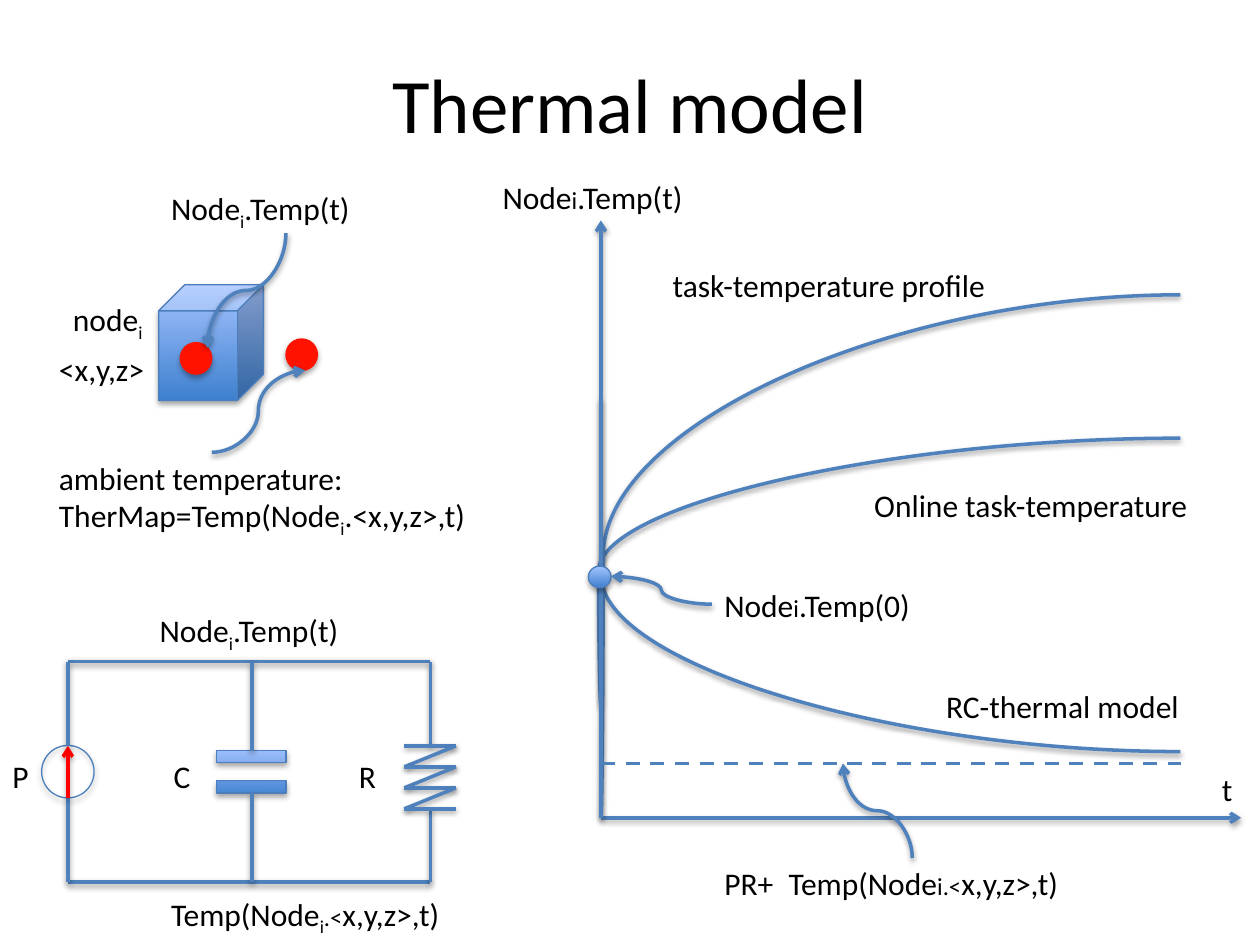
from dataclasses import dataclass

from lxml import etree
from pptx import Presentation
from pptx import util as u
from pptx.dml.color import RGBColor
from pptx.enum import dml, shapes, text
from pptx.oxml.ns import qn


@dataclass(frozen=True)
class Theme:
    font: str = "Calibri"
    title: float = 44
    body: float = 18
    small: float = 14
    stroke: float = 2
    outline_width: float = 0.75
    ink: RGBColor = RGBColor(0, 0, 0)
    blue: RGBColor = RGBColor(0x4F, 0x81, 0xBD)
    outline: RGBColor = RGBColor(0x4B, 0x7E, 0xBC)
    dark: RGBColor = RGBColor(0x3F, 0x80, 0xCE)
    light: RGBColor = RGBColor(0xA4, 0xC4, 0xFF)
    hot: RGBColor = RGBColor(0xFF, 0x13, 0x00)
    source: RGBColor = RGBColor(0xFF, 0x00, 0x00)


theme = Theme()
presentation = Presentation()
presentation.slide_width, presentation.slide_height = u.Pt(720), u.Pt(540)
slide = presentation.slides.add_slide(presentation.slide_layouts[6])


def add_label(left, top, width, height, paragraphs, wrap=False, size=theme.body):
    """Each paragraph is a list of runs: text, or (text, "sub" or "small")."""
    box = slide.shapes.add_textbox(u.Pt(left), u.Pt(top), u.Pt(width), u.Pt(height))
    frame = box.text_frame
    frame.word_wrap = wrap
    frame.auto_size = text.MSO_AUTO_SIZE.SHAPE_TO_FIT_TEXT
    for index, runs in enumerate(paragraphs):
        paragraph = frame.add_paragraph() if index else frame.paragraphs[0]
        for item in runs:
            words, style = (item, "") if isinstance(item, str) else item
            run = paragraph.add_run()
            run.text = words
            run.font.name = theme.font
            run.font.size = u.Pt(theme.small if style == "small" else size)
            run.font.color.rgb = theme.ink
            if style == "sub":
                run.font._element.set("baseline", "-25000")
    return box


def add_line(x1, y1, x2, y2, arrow=False, color=theme.blue, bend=None, vertical=False):
    """Bend is the turning point of a curve; vertical curves leave upright."""
    kind = shapes.MSO_CONNECTOR.STRAIGHT if bend is None else shapes.MSO_CONNECTOR.CURVE
    turn = 1 if y2 > y1 else -1
    if vertical:
        # Lay the curve on its side about its centre, then turn it upright
        center_x, center_y = (x1 + x2) / 2, (y1 + y2) / 2
        along, across = turn * (y1 - center_y), -turn * (x1 - center_x)
        x1, x2 = center_x + along, center_x - along
        y1, y2 = center_y + across, center_y - across
    line = slide.shapes.add_connector(kind, u.Pt(x1), u.Pt(y1), u.Pt(x2), u.Pt(y2))
    line.line.color.rgb = color
    line.line.width = u.Pt(theme.stroke)
    properties = line._element.spPr
    if vertical:
        properties.find(qn("a:xfrm")).set("rot", str(turn * 90 % 360 * 60000))
    if bend is not None:
        adjustments = properties.find(qn("a:prstGeom")).get_or_add_avLst()
        etree.SubElement(adjustments, qn("a:gd"), name="adj1", fmla=f"val {round(bend * 100000)}")
    if arrow:
        etree.SubElement(properties.find(qn("a:ln")), qn("a:tailEnd"), type="arrow")
    return line


# Title
title = add_label(36, 13.7, 648, 90, [["Thermal model"]], wrap=True, size=theme.title)
title.text_frame.auto_size = text.MSO_AUTO_SIZE.NONE
title.text_frame.vertical_anchor = text.MSO_ANCHOR.MIDDLE
title.text_frame.paragraphs[0].alignment = text.PP_ALIGN.CENTER

# Graph curves, axes and ambient level
axis_x, axis_y, curve_end = 343.4, 467.3, 674.6
for start_y, end_y, bend in (
    (227.5, 429.5, 0),
    (402.6, 250.4, -0.004),
    (axis_y, 168.5, 0.004),
):
    add_line(axis_x, start_y, curve_end, end_y, bend=bend)
add_line(axis_x, axis_y, 709.2, axis_y, arrow=True)
add_line(axis_x, axis_y, axis_x, 126, arrow=True)
ambient = add_line(axis_x, 436.3, curve_end, 436.3)
ambient.line.dash_style = dml.MSO_LINE.DASH
etree.SubElement(ambient._element.spPr, qn("a:effectLst"))

# Solid shapes, with the theme's soft shadow: start point, cube, heat spots, circuit parts
preset = shapes.MSO_SHAPE
for kind, left, top, width, height, fill in (
    (preset.OVAL, 336.2, 323.5, 13, 12.4, "gradient"),
    (preset.CUBE, 90.7, 162.7, 59.8, 66.2, "gradient"),
    (preset.OVAL, 103, 195.8, 18, 18, "hot"),
    (preset.OVAL, 163.4, 193.7, 18, 18, "hot"),
    (preset.OVAL, 23.8, 426, 30, 30, "none"),
    (preset.MATH_EQUAL, 116.6, 426, 54, 30, "gradient"),
):
    shape = slide.shapes.add_shape(kind, u.Pt(left), u.Pt(top), u.Pt(width), u.Pt(height))
    shape.line.width = u.Pt(theme.outline_width)
    shape.line.color.rgb = theme.hot if fill == "hot" else theme.outline
    if fill == "gradient":
        shape.fill.gradient()
        shape.fill.gradient_angle = 90
        for stop, color in zip(shape.fill.gradient_stops, (theme.dark, theme.light)):
            stop.color.rgb = color
    elif fill == "hot":
        shape.fill.solid()
        shape.fill.fore_color.rgb = theme.hot
    else:
        shape.fill.background()
    if kind == preset.MATH_EQUAL:
        shape.adjustments[0], shape.adjustments[1] = 0.235, 0.341

# Curved pointers
add_line(521.3, 490.3, 481.7, 436.3, arrow=True, bend=0.5, vertical=True)
add_line(406.8, 345.3, 349.2, 329.4, arrow=True, bend=0.5)
add_line(121, 258.5, 174.2, 211.7, arrow=True, bend=0.5)
add_line(163.4, 133.2, 118.4, 198.7, arrow=True, bend=0.5, vertical=True)

# Circuit wires
wire_left, wire_middle, wire_right = 38.8, 144, 245.9
wire_top, wire_bottom, part_top = 378, 504, 426.2
for y in (wire_top, wire_bottom):
    add_line(wire_left, y, wire_right, y)
for x, upper_end, lower_start in (
    (wire_left, part_top, 456),
    (wire_middle, 429.1, 452.9),
    (wire_right, part_top, 462.2),
):
    add_line(x, wire_top, x, upper_end)
    add_line(x, lower_start, x, wire_bottom)
add_line(wire_left, 456, wire_left, part_top, arrow=True, color=theme.source)

# Resistor zigzag
zig_left, zig_right, zig_step = 231.1, 260.6, 12
for row in range(4):
    y = part_top + row * zig_step
    add_line(zig_left, y, zig_right, y)
    if row < 3:
        add_line(zig_right, y, zig_left, y + zig_step)

# Graph labels
for left, top, width, runs in (
    (691.2, 436.3, 21.6, ["t"]),
    (533.5, 388.8, 157.7, ["RC-thermal model"]),
    (492.5, 274.3, 227.5, ["Online task-temperature"]),
    (280.1, 97.9, 126.7, ["Node", ("i", "small"), ".Temp(t)"]),
    (443.5, 490.3, 180.7, ["Temp(Node", ("i.<", "small"), "x,y,z>,t)"]),
    (406.8, 490.3, 51.1, ["PR+"]),
    (406.8, 331.2, 128.9, ["Node", ("i", "small"), ".Temp(0)"]),
    (377.3, 148.3, 208.1, ["task-temperature profile"]),
):
    add_label(left, top, width, 29, [runs], wrap=True)

# Node and circuit labels
node_temperature = ["Node", ("i", "sub"), ".Temp(t)"]
for left, top, width, runs in (
    (34.6, 167.8, 56.2, ["node", ("i", "sub")]),
    (26.6, 196.6, 64.1, ["<x,y,z>"]),
    (90.7, 104.4, 119.5, node_temperature),
    (84.2, 345.6, 119.5, node_temperature),
    (0, 429.1, 23.8, ["P"]),
    (92.2, 429.1, 24.5, ["C"]),
    (198, 429.1, 24.5, ["R"]),
    (90.7, 507.6, 169.9, ["Temp(Node", ("i", "sub"), (".<", "small"), "x,y,z>,t)"]),
):
    add_label(left, top, width, 29, [runs])
add_label(26.6, 258.5, 249.1, 51, [
    ["ambient temperature:"],
    ["TherMap=Temp(Node", ("i", "sub"), ".<x,y,z>,t)"],
])

presentation.save("out.pptx")
